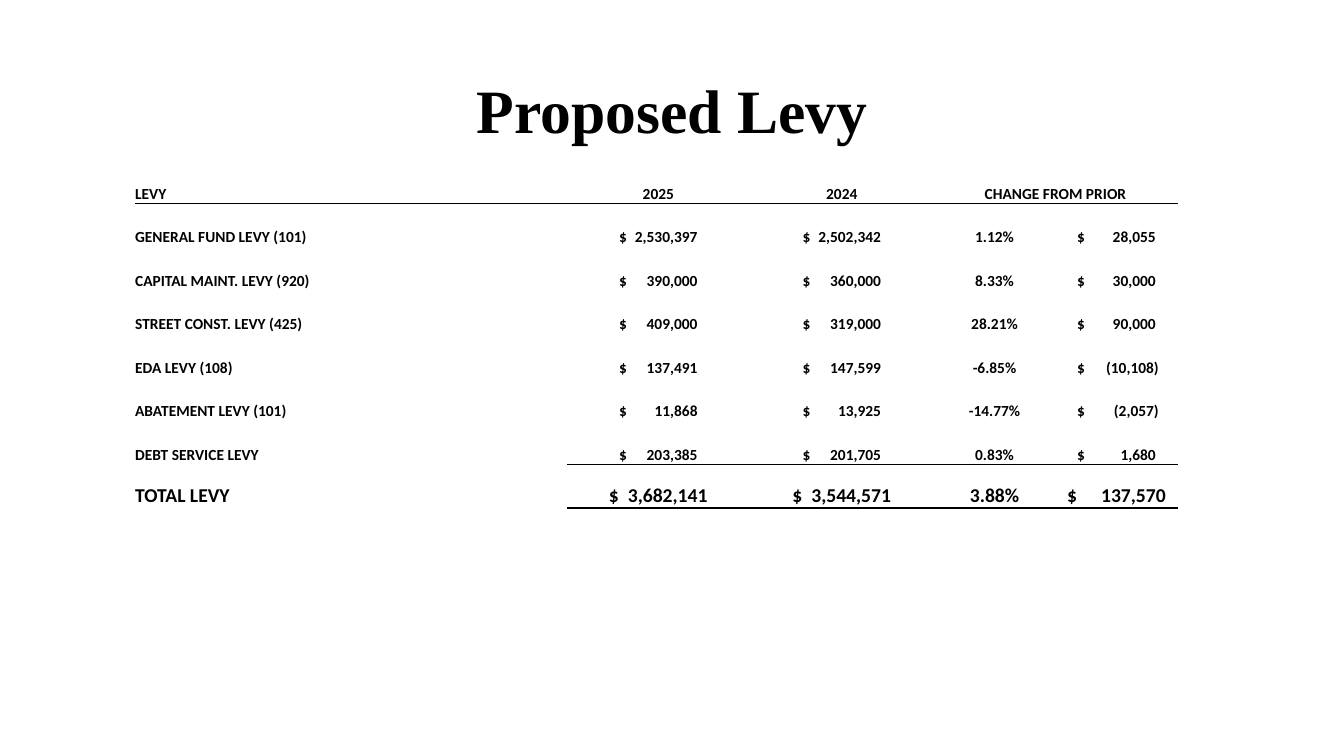
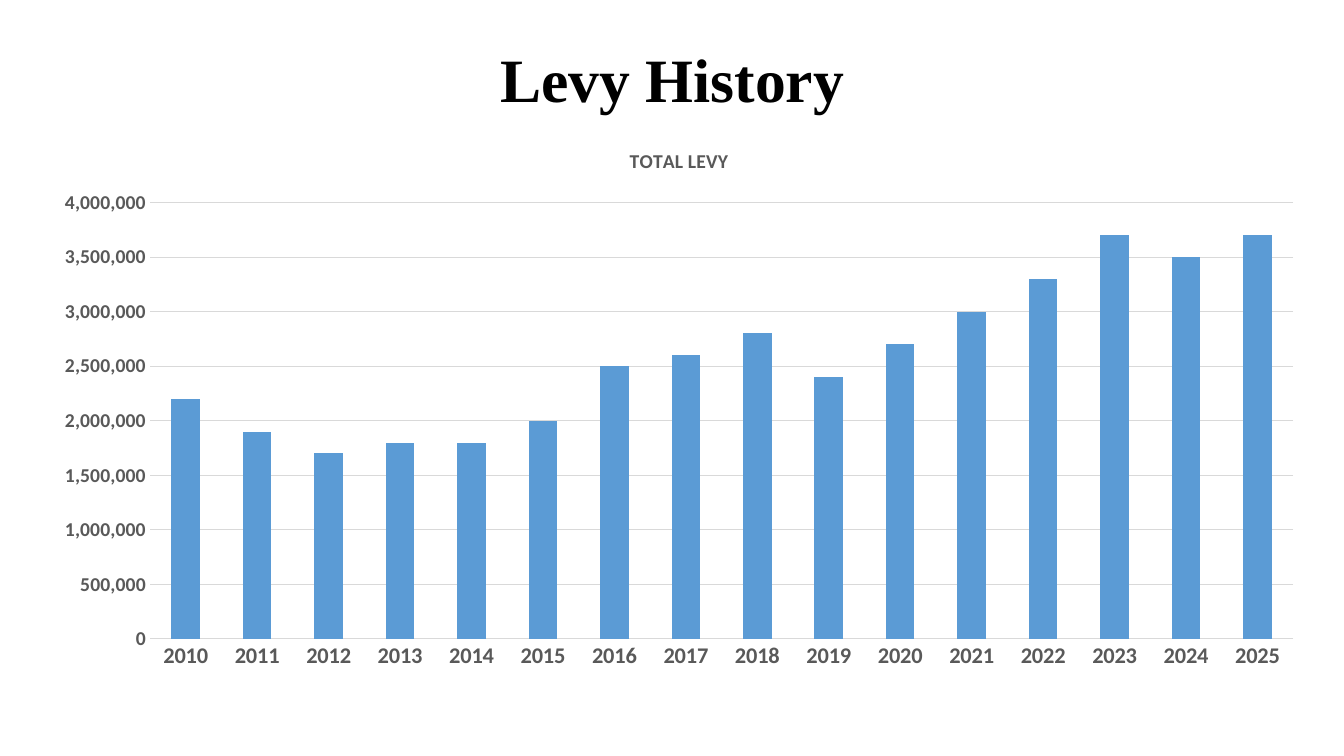
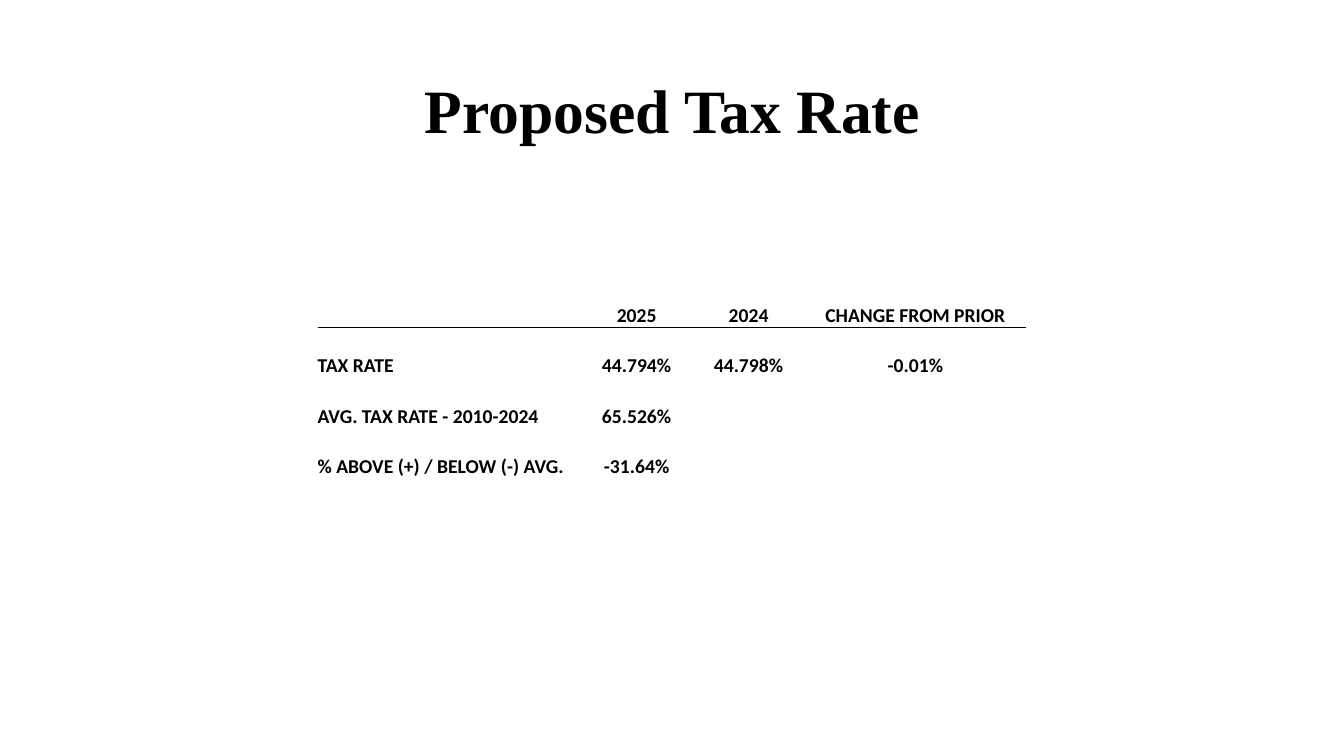
from dataclasses import dataclass

from lxml import etree
from pptx import Presentation
from pptx import util as u
from pptx.chart import data as chart_data
from pptx.dml.color import RGBColor
from pptx.enum import chart as charts, text
from pptx.oxml import ns

NO_GRID_STYLE = "{2D5ABB26-0587-4C30-8999-92F81FD0307C}"


@dataclass(frozen=True)
class Theme:
    ink: RGBColor = RGBColor(0x00, 0x00, 0x00)
    muted: RGBColor = RGBColor(0x59, 0x59, 0x59)
    grid: RGBColor = RGBColor(0xD9, 0xD9, 0xD9)
    bar: RGBColor = RGBColor(0x5B, 0x9B, 0xD5)
    title_font: str = "Times New Roman"
    body_font: str = "Calibri"
    title_size: int = 44
    year_size: int = 16
    large_size: int = 14
    small_size: int = 11
    chart_size: int = 10
    thin_rule: float = 0.5
    total_rule: float = 2


THEME = Theme()


@dataclass(frozen=True)
class Rule:
    """A line under a table row, from first_col to the right edge."""
    row: int
    first_col: int
    width: float


@dataclass(frozen=True)
class TableSpec:
    left: float
    top: float
    col_widths: list[float]
    row_heights: list[float]
    rows: list[list[str]]
    sizes: list[int]
    rules: list[Rule]
    merged_rows: list[int]  # rows whose last two cells are one


# Content
LEVY = TableSpec(
    left=1.34, top=1.59,
    col_widths=[4.28, 1.82, 1.82, 1.21, 1.21],
    row_heights=[3.45 / 8] * 8 + [0.25],
    rows=[
        ["LEVY", "2025", "2024", "CHANGE FROM PRIOR"],
        ["GENERAL FUND LEVY (101)", "$\t2,530,397", "$\t2,502,342", "1.12%", "$\t28,055"],
        ["CAPITAL MAINT. LEVY (920)", "$\t390,000", "$\t360,000", "8.33%", "$\t30,000"],
        ["STREET CONST. LEVY (425)", "$\t409,000", "$\t319,000", "28.21%", "$\t90,000"],
        ["EDA LEVY (108)", "$\t137,491", "$\t147,599", "-6.85%", "$\t(10,108)"],
        ["ABATEMENT LEVY (101)", "$\t11,868", "$\t13,925", "-14.77%", "$\t(2,057)"],
        ["DEBT SERVICE LEVY", "$\t203,385", "$\t201,705", "0.83%", "$\t1,680"],
        ["TOTAL LEVY", "$\t3,682,141", "$\t3,544,571", "3.88%", "$\t137,570"],
        [],
    ],
    sizes=[THEME.small_size] * 7 + [THEME.large_size, THEME.small_size],
    rules=[Rule(0, 0, THEME.thin_rule), Rule(6, 1, THEME.thin_rule),
           Rule(7, 1, THEME.total_rule)],
    merged_rows=[0],
)

TAX_RATE = TableSpec(
    left=3.15, top=2.75,
    col_widths=[2.61, 1.11, 1.11, 1.1, 1.1],
    row_heights=[0.5] * 4,
    rows=[
        ["", "2025", "2024", "CHANGE FROM PRIOR"],
        ["TAX RATE", "44.794%", "44.798%", "-0.01%"],
        ["AVG. TAX RATE - 2010-2024", "65.526%"],
        ["% ABOVE (+) / BELOW (-) AVG.", "-31.64%"],
    ],
    sizes=[THEME.large_size] * 4,
    rules=[Rule(0, 0, THEME.thin_rule)],
    merged_rows=[0, 1],
)

FIRST_YEAR = 2010
TOTAL_LEVIES = [2200000, 1900000, 1700000, 1800000, 1800000, 2000000, 2500000, 2600000,
                2800000, 2400000, 2700000, 3000000, 3300000, 3700000, 3500000, 3700000]


def style_font(font, name: str, size: int, color: RGBColor) -> None:
    font.name = name
    font.size = u.Pt(size)
    font.bold = True
    font.color.rgb = color


def add_title(slide, wording: str, top: float = 0.4, height: float = 1.45) -> None:
    title = slide.shapes.add_textbox(u.Inches(0.92), u.Inches(top),
                                     u.Inches(11.5), u.Inches(height))
    frame = title.text_frame
    frame.word_wrap = True
    frame.vertical_anchor = text.MSO_ANCHOR.MIDDLE
    frame.text = wording
    line = frame.paragraphs[0]
    line.alignment = text.PP_ALIGN.CENTER
    line.line_spacing = 0.9
    style_font(line.runs[0].font, THEME.title_font, THEME.title_size, THEME.ink)


# Tables
def add_bottom_border(cell, width: float) -> None:
    border = etree.SubElement(cell._tc.get_or_add_tcPr(), ns.qn("a:lnB"),
                              w=str(u.Pt(width)))
    fill = etree.SubElement(border, ns.qn("a:solidFill"))
    etree.SubElement(fill, ns.qn("a:srgbClr"), val=str(THEME.ink))


def align_amount(cell, wording: str, size: int, col_width: float) -> None:
    """Centre an amount: dollar sign left, figures against a right tab."""
    span = 0.98 if size == THEME.large_size else 0.78
    cell.margin_left = u.Inches((col_width - span) / 2)
    if wording.endswith(")"):
        span += 0.03  # closing bracket hangs past the figures
    props = cell.text_frame.paragraphs[0]._p.get_or_add_pPr()
    tabs = etree.SubElement(props, ns.qn("a:tabLst"))
    etree.SubElement(tabs, ns.qn("a:tab"), pos=str(u.Inches(span)), algn="r")


def fill_cell(cell, wording: str, size: int, col: int, col_width: float) -> None:
    cell.margin_left = cell.margin_right = cell.margin_top = cell.margin_bottom = 0
    cell.vertical_anchor = text.MSO_ANCHOR.BOTTOM
    cell.text_frame.text = wording
    line = cell.text_frame.paragraphs[0]
    if "\t" in wording:
        align_amount(cell, wording, size, col_width)
    elif col:
        line.alignment = text.PP_ALIGN.CENTER
    style_font(line.font, THEME.body_font, size, THEME.ink)
    for run in line.runs:
        style_font(run.font, THEME.body_font, size, THEME.ink)


def add_table(slide, spec: TableSpec) -> None:
    frame = slide.shapes.add_table(
        len(spec.row_heights), len(spec.col_widths), u.Inches(spec.left), u.Inches(spec.top),
        u.Inches(sum(spec.col_widths)), u.Inches(sum(spec.row_heights)))
    table = frame.table
    table.first_row = table.horz_banding = False
    table._tbl.tblPr.find(ns.qn("a:tableStyleId")).text = NO_GRID_STYLE
    for column, width in zip(table.columns, spec.col_widths):
        column.width = u.Inches(width)
    for row, height in zip(table.rows, spec.row_heights):
        row.height = u.Inches(height)

    for r, wordings in enumerate(spec.rows):
        for c, col_width in enumerate(spec.col_widths):
            cell = table.cell(r, c)
            wording = wordings[c] if c < len(wordings) else ""
            fill_cell(cell, wording, spec.sizes[r], c, col_width)
            for rule in spec.rules:
                if rule.row == r and c >= rule.first_col:
                    add_bottom_border(cell, rule.width)
            cell.fill.background()
    last = len(spec.col_widths) - 1
    for r in spec.merged_rows:
        table.cell(r, last - 1).merge(table.cell(r, last))


# Chart
def style_axis(axis, size: int) -> None:
    axis.major_tick_mark = axis.minor_tick_mark = charts.XL_TICK_MARK.NONE
    axis.format.line.fill.background()
    style_font(axis.tick_labels.font, THEME.body_font, size, THEME.muted)


def add_history_chart(slide) -> None:
    history = chart_data.CategoryChartData(number_format="#,##0")
    history.categories = [str(FIRST_YEAR + i) for i in range(len(TOTAL_LEVIES))]
    history.add_series("TOTAL LEVY", TOTAL_LEVIES)
    chart = slide.shapes.add_chart(
        charts.XL_CHART_TYPE.COLUMN_CLUSTERED, u.Inches(0.39), u.Inches(1.26),
        u.Inches(12.69), u.Inches(5.5), history).chart
    chart.font.name = THEME.body_font
    chart.font.size = u.Pt(THEME.chart_size)
    chart.font.color.rgb = THEME.ink
    chart.has_legend = False

    heading = chart.chart_title.text_frame
    heading.text = "TOTAL LEVY"
    style_font(heading.paragraphs[0].runs[0].font, THEME.body_font,
               THEME.large_size, THEME.muted)
    chart.chart_title.include_in_layout = False

    style_axis(chart.category_axis, THEME.year_size)
    amounts = chart.value_axis
    style_axis(amounts, THEME.large_size)
    amounts.minimum_scale, amounts.maximum_scale, amounts.major_unit = 0, 4000000, 500000
    amounts.tick_labels.number_format = "#,##0"
    amounts.tick_labels.number_format_is_linked = False
    amounts.major_gridlines.format.line.color.rgb = THEME.grid
    amounts.major_gridlines.format.line.width = u.Pt(0.75)

    bars = chart.plots[0]
    bars.gap_width = 150
    bars.vary_by_categories = False
    bars.series[0].format.fill.solid()
    bars.series[0].format.fill.fore_color.rgb = THEME.bar


def main() -> None:
    deck = Presentation()
    deck.slide_width, deck.slide_height = u.Inches(13.33), u.Inches(7.5)
    blank = deck.slide_layouts[6]

    # Proposed levy
    levy = deck.slides.add_slide(blank)
    add_title(levy, "Proposed Levy")
    add_table(levy, LEVY)

    # Levy history
    history = deck.slides.add_slide(blank)
    add_title(history, "Levy History", top=0.37, height=0.89)
    add_history_chart(history)

    # Proposed tax rate
    tax_rate = deck.slides.add_slide(blank)
    add_title(tax_rate, "Proposed Tax Rate")
    add_table(tax_rate, TAX_RATE)

    deck.save("out.pptx")


if __name__ == "__main__":
    main()
